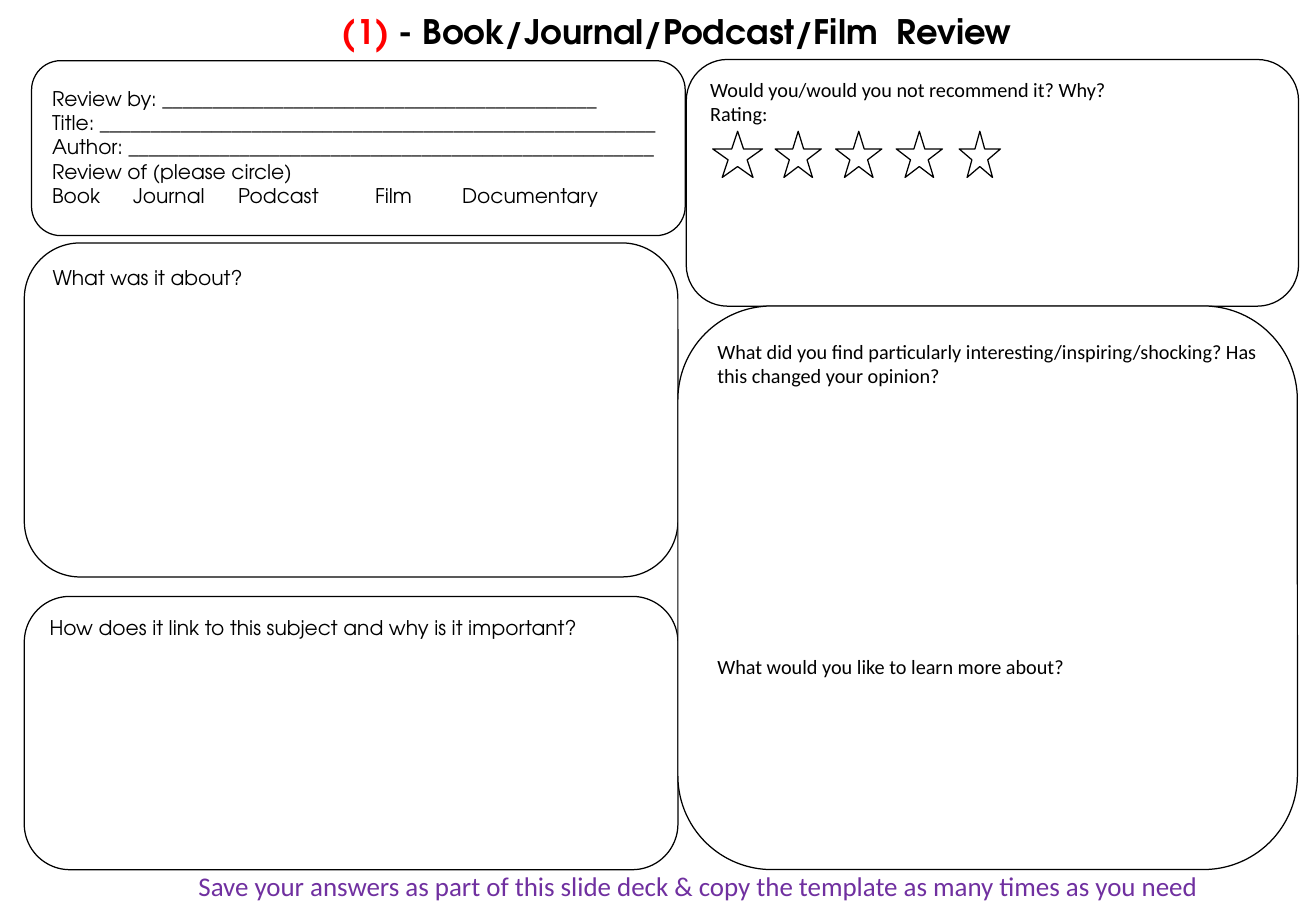
"""Builds a one-page review template with answer boxes and a star rating."""
from lxml import etree
from pptx import Presentation
from pptx.dml.color import RGBColor
from pptx.enum.shapes import MSO_SHAPE
from pptx.enum.text import MSO_ANCHOR, MSO_AUTO_SIZE, PP_ALIGN
from pptx.oxml.ns import qn
from pptx.util import Pt

ROUNDED = MSO_SHAPE.FLOWCHART_ALTERNATE_PROCESS
RECTANGLE = MSO_SHAPE.RECTANGLE
STAR = MSO_SHAPE.STAR_5_POINT
TOP = MSO_ANCHOR.TOP
NO_AUTOFIT = MSO_AUTO_SIZE.NONE
LEFT, CENTER = PP_ALIGN.LEFT, PP_ALIGN.CENTER

COLORS = {"paper": "FFFFFF", "ink": "000000", "number": "FF0000", "reminder": "7030A0"}
SANS, GEOMETRIC = "Calibri", "TeX Gyre Adventor"

prs = Presentation()
prs.slide_width, prs.slide_height = Pt(780), Pt(540)
slide = prs.slides.add_slide(prs.slide_layouts[5])


def add_box(kind, left, top, width, height, filled=True, outlined=True):
    box = slide.shapes.add_shape(kind, Pt(left), Pt(top), Pt(width), Pt(height))
    box.shadow.inherit = False
    if filled:
        box.fill.solid()
        box.fill.fore_color.rgb = RGBColor.from_string(COLORS["paper"])
    else:
        box.fill.background()
    if outlined:
        box.line.color.rgb = RGBColor.from_string(COLORS["ink"])
        box.line.width = Pt(0.75)
    else:
        box.line.fill.background()
    return box


def write(frame, lines, font, size=12, color="ink", align=LEFT):
    frame.word_wrap = True
    frame.vertical_anchor = TOP
    frame.text = "\n".join(lines)
    for paragraph in frame.paragraphs:
        paragraph.alignment = align
        paragraph.font.name = font
        paragraph.font.size = Pt(size)
        paragraph.font.color.rgb = RGBColor.from_string(COLORS[color])


heading = slide.shapes.title
heading.left, heading.top, heading.width, heading.height = Pt(180), Pt(2.9), Pt(442.8), Pt(28.8)
write(heading.text_frame, [""], GEOMETRIC, 20, align=CENTER)
heading.text_frame.auto_size = NO_AUTOFIT
heading_line = heading.text_frame.paragraphs[0]
heading_line.font.bold = True
for words, color in (("(1)", "number"), (" - Book/Journal/Podcast/Film  Review", "ink")):
    run = heading_line.add_run()
    run.text = words
    run.font.color.rgb = RGBColor.from_string(COLORS[color])

questions = [
    (406.8, 35.3, 362.9, 146.2, SANS, ["Would you/would you not recommend it? Why?", "Rating:"]),
    (14.4, 353.5, 387.4, 162, GEOMETRIC, ["How does it link to this subject and why is it important?"]),
    (14.4, 144, 387.4, 198, GEOMETRIC, ["What was it about?"]),
    (401.8, 181.4, 367.2, 334.1, SANS, [
        "What did you find particularly interesting/inspiring/shocking? Has this changed your opinion?",
        "What would you like to learn more about?",
    ]),
]
for left, top, width, height, font, lines in questions:
    question = add_box(ROUNDED, left, top, width, height)
    write(question.text_frame, lines, font)
question.text_frame.paragraphs[1].space_before = Pt(158)

details = add_box(RECTANGLE, 23.8, 47.5, 378, 74.2, outlined=False)
write(details.text_frame, [
    "Review by: " + "_" * 43,
    "Title: " + "_" * 55,
    "Author: " + "_" * 52,
    "Review of (please circle)",
    "Book\tJournal\tPodcast\tFilm\tDocumentary",
], GEOMETRIC)
tab_list = etree.Element(qn("a:tabLst"))
for position in (48, 110.2, 191.4, 243):
    etree.SubElement(tab_list, qn("a:tab"), pos=str(Pt(position)), algn="l")
media_types = details.text_frame.paragraphs[-1]
media_types.font._element.addprevious(tab_list)

add_box(ROUNDED, 18.7, 36, 387.4, 103.7, filled=False)

for index, width in enumerate((29.5, 27.4, 27.4, 27.4, 24.5)):
    add_box(STAR, 437.2 + 35.9 * index - width / 2, 77.8, width, 27.4)

reminder = slide.shapes.add_textbox(Pt(23.8), Pt(511.9), Pt(780), Pt(26.6))
write(reminder.text_frame,
      ["Save your answers as part of this slide deck & copy the template as many times as you need"],
      SANS, 16, "reminder", CENTER)

prs.save("out.pptx")
